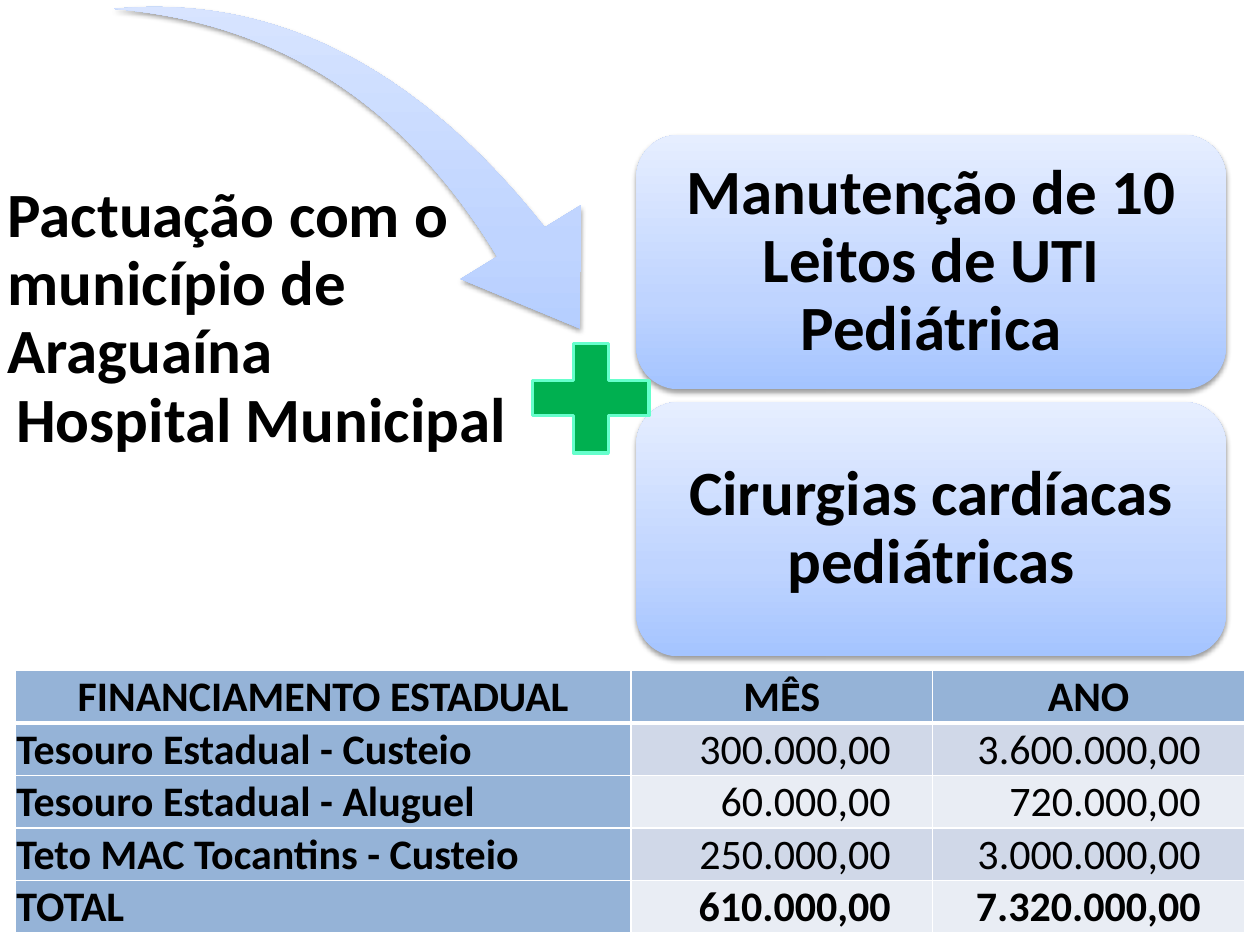
from lxml.etree import SubElement
from pptx import Presentation
from pptx.dml.color import RGBColor
from pptx.enum.shapes import MSO_SHAPE
from pptx.enum.text import MSO_ANCHOR, PP_ALIGN
from pptx.oxml import parse_xml
from pptx.oxml.ns import nsdecls, qn
from pptx.util import Inches, Pt

COLORS = {
    "text": "000000", "plus": "00B050", "plus_line": "66FFCC",
    "label": "95B3D7", "odd_row": "D0D8E8", "even_row": "E9EDF4",
    "border": "FFFFFF", "shadow": "000000",
}
GRADIENT = [(0, "A4C4FF"), (35, "BFD4FF"), (100, "E6EEFF")]

BOXES = ["Manutenção de 10 Leitos de UTI Pediátrica", "Cirurgias cardíacas pediátricas"]
ROWS = [
    ["FINANCIAMENTO ESTADUAL", "MÊS", "ANO"],
    ["Tesouro Estadual - Custeio", "300.000,00", "3.600.000,00"],
    ["Tesouro Estadual - Aluguel", "60.000,00", "720.000,00"],
    ["Teto MAC Tocantins - Custeio", "250.000,00", "3.000.000,00"],
    ["TOTAL", "610.000,00", "7.320.000,00"],
]
COLUMN_WIDTHS = [4.89, 2.39, 2.48]
VALUE_MARGINS = [0.01, 0.33, 0.35]


def color(name):
    return RGBColor.from_string(COLORS[name])


def set_all(target, values):
    for name, value in values.items():
        setattr(target, name, value)


def write(frame, text, size, align, anchor, margins, bold=True, spacing=None):
    """Fill a text frame with one formatted paragraph."""
    set_all(frame, {"word_wrap": True, "vertical_anchor": anchor})
    sides = ("margin_left", "margin_top", "margin_right", "margin_bottom")
    set_all(frame, {side: Inches(margin) for side, margin in zip(sides, margins)})
    paragraph = frame.paragraphs[0]
    paragraph.text = text
    set_all(paragraph, {"alignment": align, "line_spacing": spacing})
    set_all(paragraph.font, {"name": "Calibri", "size": Pt(size), "bold": bold})
    paragraph.font.color.rgb = color("text")


def add_text(slide, text, place, align, anchor):
    box = slide.shapes.add_textbox(*map(Inches, place))
    write(box.text_frame, text, 36, align, anchor, [0.05] * 4, spacing=0.9)


def add_gradient_shape(slide, kind, place):
    """Add a borderless shape with the blue gradient and a soft shadow."""
    shape = slide.shapes.add_shape(kind, *map(Inches, place))
    shape.line.fill.background()
    stops = "".join(
        f'<a:gs pos="{position * 1000}"><a:srgbClr val="{value}"/></a:gs>'
        for position, value in GRADIENT)
    gradient = parse_xml(
        f'<a:gradFill {nsdecls("a")} rotWithShape="0"><a:gsLst>{stops}</a:gsLst>'
        '<a:lin ang="16200000" scaled="0"/></a:gradFill>')
    properties = shape._element.spPr
    properties.find(qn("a:prstGeom")).addnext(gradient)
    properties.append(parse_xml(
        f'<a:effectLst {nsdecls("a")}><a:outerShdw blurRad="{Pt(3.1)}" dist="{Pt(1.6)}" '
        f'dir="5400000" rotWithShape="0"><a:srgbClr val="{COLORS["shadow"]}">'
        '<a:alpha val="38000"/></a:srgbClr></a:outerShdw></a:effectLst>'))
    return shape


def add_boxes(slide):
    for index, text in enumerate(BOXES):
        place = (5.05, 1.07 + index * 2.12, 4.68, 2.02)
        shape = add_gradient_shape(slide, MSO_SHAPE.ROUNDED_RECTANGLE, place)
        write(shape.text_frame, text, 36, PP_ALIGN.CENTER, MSO_ANCHOR.MIDDLE,
              [0.15, 0.07, 0.15, 0.07], spacing=0.9)


def add_arrow(slide):
    arrow = add_gradient_shape(slide, MSO_SHAPE.SWOOSH_ARROW, (1.01, -0.1, 3.87, 2.7))
    arrow.rotation = 64.9
    arrow.adjustments[0] = 0.163
    arrow.adjustments[1] = 0.314


def add_plus(slide):
    plus = slide.shapes.add_shape(
        MSO_SHAPE.MATH_PLUS, *map(Inches, (4.06, 2.57, 1.26, 1.18)))
    plus.shadow.inherit = False
    plus.fill.solid()
    plus.fill.fore_color.rgb = color("plus")
    plus.line.color.rgb = color("plus_line")
    plus.line.width = Pt(2)


def add_borders(cell, bottom):
    properties = cell._tc.get_or_add_tcPr()
    for side, width in (("L", 1), ("R", 1), ("T", 1), ("B", bottom)):
        line = SubElement(properties, qn(f"a:ln{side}"), w=str(Pt(width)))
        fill = SubElement(line, qn("a:solidFill"))
        SubElement(fill, qn("a:srgbClr"), val=COLORS["border"])


def add_funding_table(slide):
    table = slide.shapes.add_table(
        len(ROWS), len(COLUMN_WIDTHS), *map(Inches, (0.12, 5.32, 9.76, 2.05))).table
    for column, width in zip(table.columns, COLUMN_WIDTHS):
        column.width = Inches(width)
    for row, texts in enumerate(ROWS):
        for column, text in enumerate(texts):
            cell = table.cell(row, column)
            header, label = row == 0, column == 0
            align = (PP_ALIGN.CENTER if header else
                     PP_ALIGN.LEFT if label else PP_ALIGN.RIGHT)
            right = 0.01 if header else VALUE_MARGINS[column]
            # Cell margins and anchor belong to the cell, not its text frame
            set_all(cell, {
                "margin_left": Inches(0.01), "margin_top": Inches(0.01),
                "margin_right": Inches(right), "margin_bottom": 0,
                "vertical_anchor": MSO_ANCHOR.MIDDLE})
            paragraph = cell.text_frame.paragraphs[0]
            paragraph.text = text
            paragraph.alignment = align
            bold = header or label or row == len(ROWS) - 1
            set_all(paragraph.font, {"name": "Calibri", "size": Pt(24), "bold": bold})
            paragraph.font.color.rgb = color("text")
            add_borders(cell, 3 if header else 1)
            cell.fill.solid()
            cell.fill.fore_color.rgb = color(
                "label" if header or label else "odd_row" if row % 2 else "even_row")


def main():
    presentation = Presentation()
    presentation.slide_width = Inches(10)
    presentation.slide_height = Inches(7.5)
    slide = presentation.slides.add_slide(presentation.slide_layouts[6])

    # Services on the right, funding below
    add_boxes(slide)
    add_funding_table(slide)

    # Agreement on the left, with its arrow and plus sign
    add_arrow(slide)
    add_text(slide, "Pactuação com o município de Araguaína",
             (0.01, 1.31, 3.85, 1.81), PP_ALIGN.LEFT, MSO_ANCHOR.BOTTOM)
    add_text(slide, "Hospital Municipal",
             (0, 3.03, 4.15, 0.72), PP_ALIGN.CENTER, MSO_ANCHOR.TOP)
    add_plus(slide)
    presentation.save("out.pptx")


if __name__ == "__main__":
    main()
